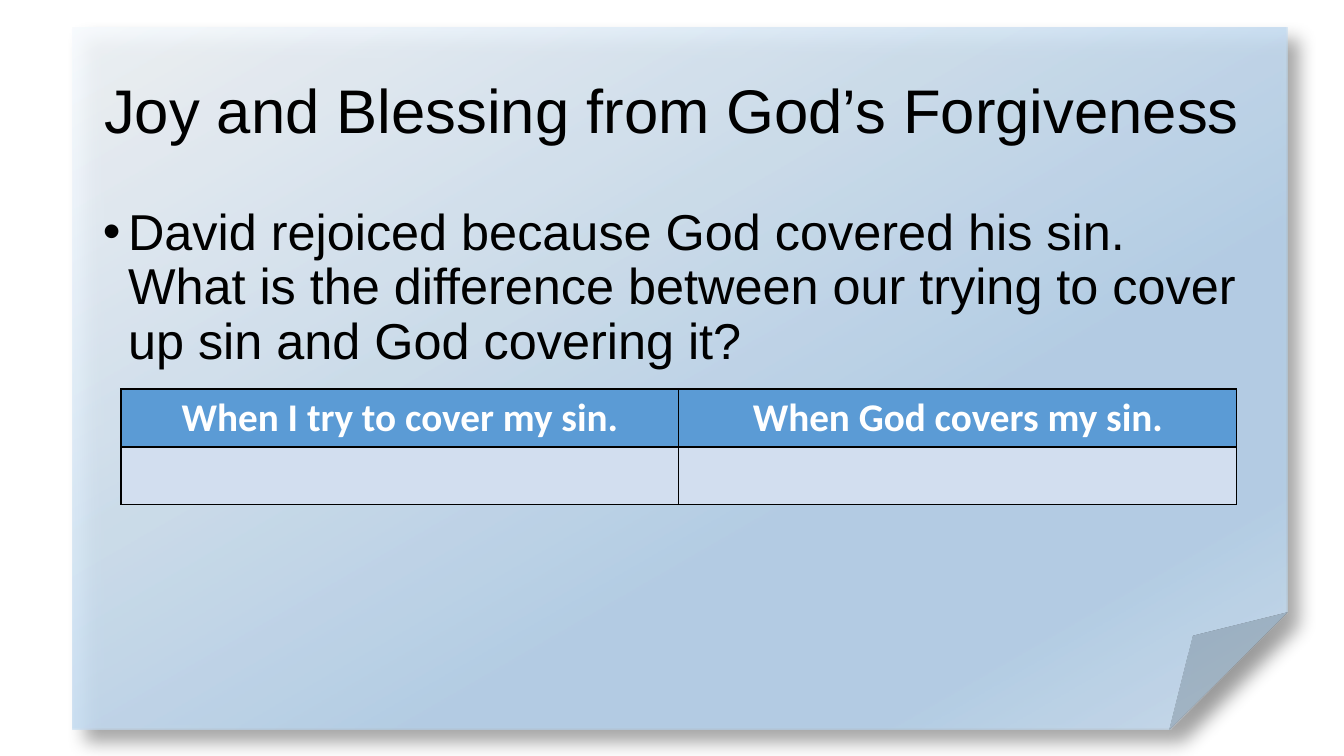
from lxml.etree import SubElement
from pptx import Presentation
from pptx.dml.color import RGBColor
from pptx.enum.shapes import MSO_SHAPE
from pptx.enum.text import MSO_ANCHOR, MSO_AUTO_SIZE, PP_ALIGN
from pptx.oxml import parse_xml
from pptx.oxml.ns import nsdecls, qn
from pptx.util import Inches, Pt

COLORS = {
    "text": "000000",
    "shadow": "000000",
    "border": "000000",
    "header_text": "FFFFFF",
    "header": "5B9BD5",
    "cell": "D2DEEF",
    "paper_light": "F7FAFD",
    "paper_blue": "B5D2EC",
    "paper_edge": "CEE1F2",
}
PAPER_STOPS = [(0, "paper_light"), (64, "paper_blue"), (83, "paper_blue"), (100, "paper_edge")]


def write_text(frame, text, size, font="Arial", color="text", bold=False,
               align=PP_ALIGN.LEFT, line_spacing=None, bullet=None):
    paragraph = frame.paragraphs[0]
    paragraph.text = text
    paragraph.alignment = align
    paragraph.line_spacing = line_spacing
    paragraph.space_before = Pt(0)
    if bullet:
        properties = paragraph._p.get_or_add_pPr()
        properties.set("marL", str(Inches(0.25)))
        properties.set("indent", str(Inches(-0.25)))
        SubElement(properties, qn("a:buFont"), typeface="Arial")
        SubElement(properties, qn("a:buChar"), char=bullet)
    style = paragraph.runs[0].font
    style.name = font
    style.size = Pt(size)
    style.bold = bold
    style.color.rgb = RGBColor.from_string(COLORS[color])


class SlideBuilder:
    def __init__(self, presentation):
        self.slide = presentation.slides.add_slide(presentation.slide_layouts[1])

    def add_paper(self, left, top, width, height):
        """Put a translucent folded sheet behind everything else."""
        paper = self.slide.shapes.add_shape(
            MSO_SHAPE.FOLDED_CORNER, Inches(left), Inches(top), Inches(width), Inches(height))
        paper.line.fill.background()
        paper.fill.background()
        paper.shadow.inherit = False
        properties = paper._element.spPr
        stops = "".join(
            f'<a:gs pos="{position * 1000}"><a:srgbClr val="{COLORS[color]}">'
            f'<a:alpha val="87000"/></a:srgbClr></a:gs>'
            for position, color in PAPER_STOPS)
        gradient = parse_xml(
            f'<a:gradFill {nsdecls("a")} rotWithShape="1"><a:gsLst>{stops}</a:gsLst>'
            f'<a:lin ang="{60 * 60000}" scaled="0"/></a:gradFill>')
        properties.replace(properties.find(qn("a:noFill")), gradient)
        shadow = parse_xml(
            f'<a:outerShdw {nsdecls("a")} blurRad="{Pt(13)}" dist="{Pt(13)}" '
            f'dir="{45 * 60000}" algn="tl" rotWithShape="0">'
            f'<a:srgbClr val="{COLORS["shadow"]}"><a:alpha val="40000"/></a:srgbClr>'
            f'</a:outerShdw>')
        properties.find(qn("a:effectLst")).append(shadow)
        self.slide.shapes._spTree.insert(2, paper._element)

    def fill_placeholder(self, index, text, left, top, width, height, anchor, **text_format):
        placeholder = self.slide.placeholders[index]
        placeholder.left, placeholder.top = Inches(left), Inches(top)
        placeholder.width, placeholder.height = Inches(width), Inches(height)
        frame = placeholder.text_frame
        frame.word_wrap = True
        frame.auto_size = MSO_AUTO_SIZE.NONE
        frame.vertical_anchor = anchor
        write_text(frame, text, **text_format)

    def add_table(self, headings, left, top, width, row_height):
        """Add a heading row above one blank row for answers."""
        table = self.slide.shapes.add_table(
            2, len(headings), Inches(left), Inches(top),
            Inches(width), Inches(row_height * 2)).table
        for column, heading in enumerate(headings):
            write_text(table.cell(0, column).text_frame, heading, 28, font="Calibri",
                       color="header_text", bold=True, align=PP_ALIGN.CENTER)
            for row, color in enumerate(("header", "cell")):
                cell = table.cell(row, column)
                self.add_borders(cell)
                cell.fill.solid()
                cell.fill.fore_color.rgb = RGBColor.from_string(COLORS[color])

    def add_borders(self, cell):
        properties = cell._tc.get_or_add_tcPr()
        for side in ("lnL", "lnR", "lnT", "lnB"):
            properties.append(parse_xml(
                f'<a:{side} {nsdecls("a")} w="{Pt(1)}"><a:solidFill>'
                f'<a:srgbClr val="{COLORS["border"]}"/></a:solidFill></a:{side}>'))


def main():
    presentation = Presentation()
    presentation.slide_width = Inches(40 / 3)
    presentation.slide_height = Inches(7.5)

    builder = SlideBuilder(presentation)
    builder.add_paper(0.72, 0.27, 12.05, 6.97)
    builder.fill_placeholder(
        0, "Joy and Blessing from God’s Forgiveness", 0.92, 0.4, 11.5, 1.45,
        MSO_ANCHOR.MIDDLE, size=44, align=PP_ALIGN.CENTER, line_spacing=0.9)
    builder.fill_placeholder(
        1, "David rejoiced because God covered his sin.  What is the difference "
           "between our trying to cover up sin and God covering it?",
        0.92, 2, 11.5, 4.76, MSO_ANCHOR.TOP, size=36, line_spacing=0.9, bullet="•")
    builder.add_table(
        ["When I try to cover my sin.", "When God covers my sin."],
        1.2, 3.86, 11.07, 0.57)
    presentation.save("out.pptx")


if __name__ == "__main__":
    main()
